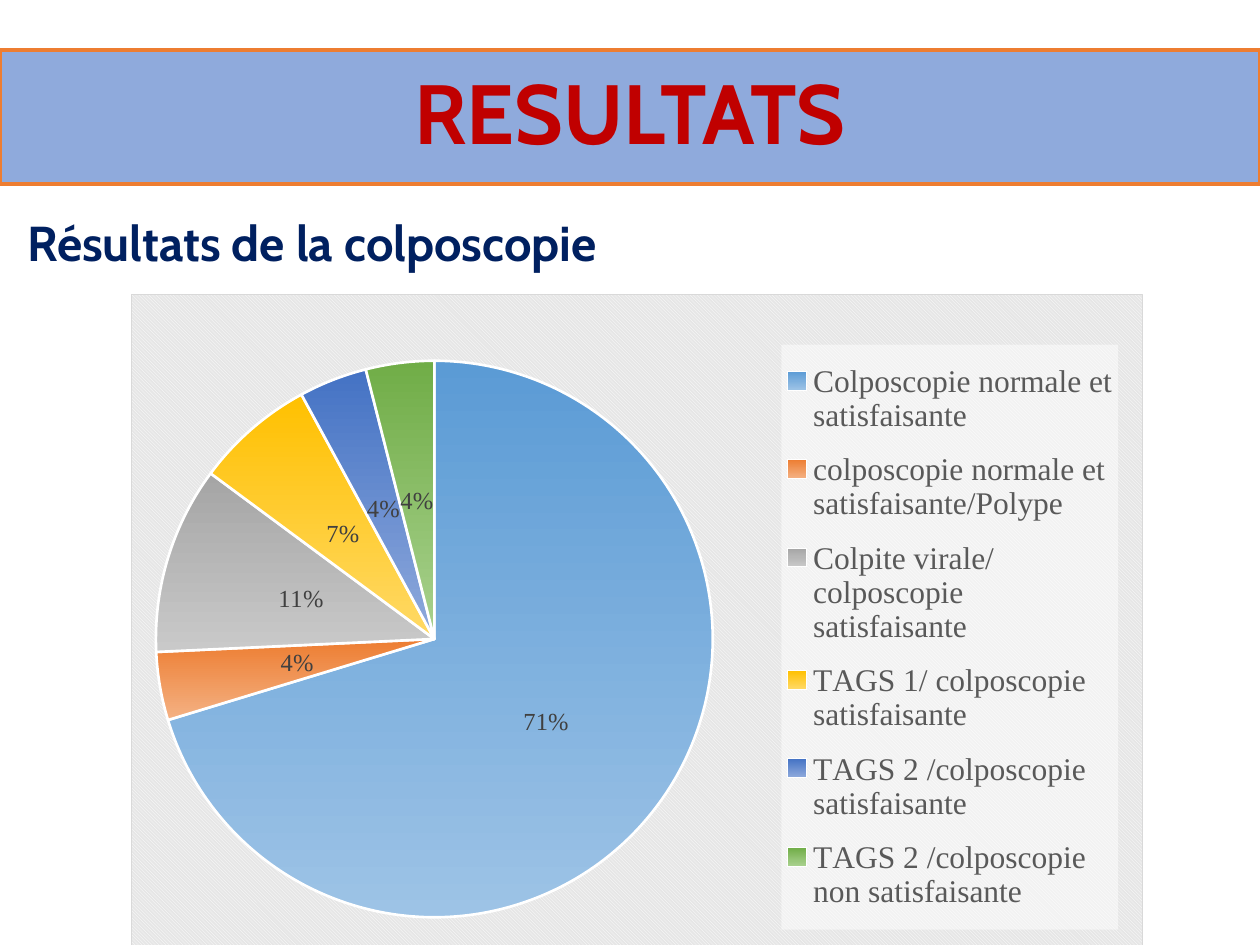
"""Build the slide on colposcopy results: a title band, a heading and a pie chart."""
from pptx import Presentation
from pptx.chart.data import CategoryChartData
from pptx.dml.color import RGBColor
from pptx.enum.chart import XL_CHART_TYPE, XL_LABEL_POSITION, XL_LEGEND_POSITION
from pptx.enum.shapes import MSO_SHAPE
from pptx.enum.text import MSO_ANCHOR, PP_ALIGN
from pptx.oxml import parse_xml
from pptx.oxml.ns import nsdecls, qn
from pptx.util import Pt

TITLE = "RESULTATS"
HEADING = "Résultats de la colposcopie"
SERIES = "Series 1"
SLICES = [
    ("Colposcopie normale et satisfaisante ", 71, "5B9BD5", "9DC3E6"),
    ("colposcopie normale et satisfaisante/Polype ", 4, "ED7D31", "F4B183"),
    ("Colpite virale/ colposcopie satisfaisante", 11, "A5A5A5", "C9C9C9"),
    ("TAGS 1/ colposcopie satisfaisante ", 7, "FFC000", "FFD966"),
    ("TAGS 2 /colposcopie satisfaisante ", 4, "4472C4", "8FAADC"),
    ("TAGS 2 /colposcopie non satisfaisante ", 4, "70AD47", "A9D18E"),
]
COLORS = {
    "band": "8FAADC", "band_line": "ED7D31", "title": "C00000", "heading": "002060",
    "white": "FFFFFF", "black": "000000", "hatch": "E6E6E6", "border": "D9D9D9",
    "legend": "595959", "label": "404040",
}
TITLE_FONT, CHART_FONT, LABEL_FONT = "Cabin", "Calibri", "Times New Roman"
SLIDE_SIZE = (1260, 945)
BAND_AREA = (0, 50, 1260, 134)
HEADING_AREA = (15, 213, 1218, 70)
CHART_AREA = (131, 294, 1012, 660)
PLOT_AREA = (155, 336, 558, 606)
LEGEND_AREA = (782, 344, 337, 586)


def px(length):
    return round(length * 914400 / 126)


def rgb(name):
    return RGBColor.from_string(COLORS.get(name, name))


def style_font(font, face, size, color, bold=False):
    font.name, font.size, font.bold = face, Pt(size), bold
    font.color.rgb = rgb(color)


def write_line(box, text, size, color, align):
    box.text_frame.word_wrap = True
    para = box.text_frame.paragraphs[0]
    para.alignment, para.line_spacing = align, 0.9
    span = para.add_run()
    span.text = text
    style_font(span.font, TITLE_FONT, size, color, True)


def manual_layout(area, inner=False):
    left, top, width, height = CHART_AREA
    fractions = {
        "x": (area[0] - left) / width, "y": (area[1] - top) / height,
        "w": area[2] / width, "h": area[3] / height,
    }
    target = '<c:layoutTarget val="inner"/>' if inner else ""
    modes = '<c:xMode val="edge"/><c:yMode val="edge"/>'
    values = "".join(f'<c:{key} val="{value:.3f}"/>' for key, value in fractions.items())
    return parse_xml(f'<c:layout {nsdecls("c")}><c:manualLayout>{target}{modes}{values}'
                     '</c:manualLayout></c:layout>')


def shape_properties(content):
    return parse_xml(f'<c:spPr {nsdecls("c", "a")}>{content}</c:spPr>')


def solid(name, extra=""):
    return f'<a:solidFill><a:srgbClr val="{COLORS[name]}">{extra}</a:srgbClr></a:solidFill>'


def add_band(page):
    band = page.shapes.add_shape(MSO_SHAPE.RECTANGLE, *map(px, BAND_AREA))
    band.shadow.inherit = False
    band.fill.solid()
    band.fill.fore_color.rgb = rgb("band")
    band.line.color.rgb = rgb("band_line")
    band.line.width = Pt(2.25)
    band.text_frame.vertical_anchor = MSO_ANCHOR.MIDDLE
    write_line(band, TITLE, 48, "title", PP_ALIGN.CENTER)


def style_slices(series):
    for index, (_, _, top, bottom) in enumerate(SLICES):
        slice_format = series.points[index].format
        slice_format.fill.gradient()
        slice_format.fill.gradient_angle = 270
        for stop, color in zip(slice_format.fill.gradient_stops, (top, bottom)):
            stop.color.rgb = rgb(color)
        slice_format.line.color.rgb = rgb("white")
        slice_format.line.width = Pt(1.5)


def add_pie(page):
    data = CategoryChartData()
    data.categories = [row[0] for row in SLICES]
    data.add_series(SERIES, [row[1] for row in SLICES])
    chart = page.shapes.add_chart(XL_CHART_TYPE.PIE, *map(px, CHART_AREA), data).chart
    chart.has_title = False
    style_font(chart.font, CHART_FONT, 10, "black")
    plot = chart.plots[0]
    plot.vary_by_categories = True
    style_slices(plot.series[0])

    plot.has_data_labels = True
    labels = plot.data_labels
    labels.show_value = True
    labels.number_format, labels.number_format_is_linked = '0"%"', False
    labels.position = XL_LABEL_POSITION.CENTER
    style_font(labels.font, LABEL_FONT, 14, "label")

    chart.has_legend = True
    legend = chart.legend
    legend.position = XL_LEGEND_POSITION.RIGHT
    legend.include_in_layout = False
    style_font(legend.font, LABEL_FONT, 18, "legend")

    space = chart.element if hasattr(chart, "element") else chart._chartSpace
    plot_area = space.find(".//" + qn("c:plotArea"))
    for old_layout in plot_area.findall(qn("c:layout")):
        plot_area.remove(old_layout)
    plot_area.insert(0, manual_layout(PLOT_AREA, True))
    legend_node = space.find(".//" + qn("c:legend"))
    for old_layout in legend_node.findall(qn("c:layout")):
        legend_node.remove(old_layout)
    legend_node.find(qn("c:legendPos")).addnext(manual_layout(LEGEND_AREA))
    legend_node.find(qn("c:overlay")).addnext(
        shape_properties(solid("white", '<a:alpha val="50000"/>')))
    space.find(qn("c:chart")).addnext(shape_properties(
        f'<a:pattFill prst="dkDnDiag"><a:fgClr><a:srgbClr val="{COLORS["white"]}"/></a:fgClr>'
        f'<a:bgClr><a:srgbClr val="{COLORS["hatch"]}"/></a:bgClr></a:pattFill>'
        f'<a:ln w="{Pt(0.75)}">{solid("border")}</a:ln>'))


def main():
    deck = Presentation()
    deck.slide_width, deck.slide_height = map(px, SLIDE_SIZE)
    page = deck.slides.add_slide(deck.slide_layouts[6])
    heading = page.shapes.add_textbox(*map(px, HEADING_AREA))
    write_line(heading, HEADING, 28, "heading", PP_ALIGN.LEFT)
    add_band(page)
    add_pie(page)
    deck.save("out.pptx")


if __name__ == "__main__":
    main()
